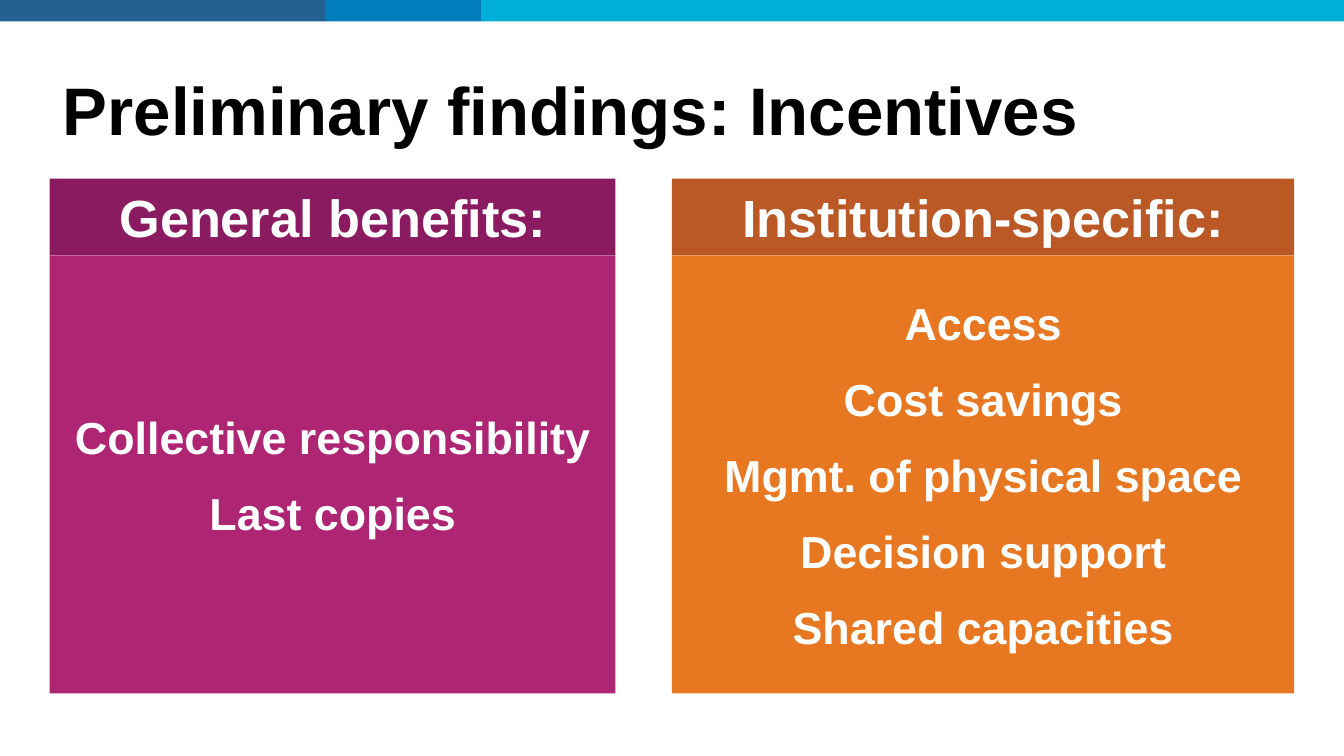
from dataclasses import dataclass

import pptx
import pptx.dml.color
import pptx.enum.shapes
import pptx.enum.text
import pptx.util

Pt = pptx.util.Pt
RGBColor = pptx.dml.color.RGBColor
Align = pptx.enum.text.PP_ALIGN
Anchor = pptx.enum.text.MSO_ANCHOR

BLACK = RGBColor(0x00, 0x00, 0x00)
WHITE = RGBColor(0xFF, 0xFF, 0xFF)
NAVY = RGBColor(0x23, 0x61, 0x92)
BLUE = RGBColor(0x00, 0x7D, 0xBA)
CYAN = RGBColor(0x00, 0xAF, 0xD7)
MAGENTA = RGBColor(0xAE, 0x25, 0x73)
PLUM = RGBColor(0x8A, 0x1B, 0x61)
ORANGE = RGBColor(0xE8, 0x77, 0x22)
RUST = RGBColor(0xBA, 0x58, 0x26)

FONT = "Arial"
SLIDE_WIDTH, SLIDE_HEIGHT = 720, 405
MARGIN = 26.64
STRIPE_HEIGHT = 11.52
HEADER_TOP, HEADER_HEIGHT = 95.76, 41.04
BODY_HEIGHT = 234.72


@dataclass(frozen=True)
class Stripe:
    width: float
    color: RGBColor


@dataclass(frozen=True)
class Panel:
    left: float
    width: float
    heading: str
    benefits: tuple[str, ...]
    header_color: RGBColor
    body_color: RGBColor


STRIPES = (Stripe(174.24, NAVY), Stripe(83.52, BLUE), Stripe(462.24, CYAN))

PANELS = (
    Panel(MARGIN, 303.12, "General benefits:",
          ("Collective responsibility", "Last copies"), PLUM, MAGENTA),
    Panel(360, 333.36, "Institution-specific:",
          ("Access", "Cost savings", "Mgmt. of physical space",
           "Decision support", "Shared capacities"), RUST, ORANGE),
)


def write_text(box, *lines: str, size: float, color: RGBColor = WHITE,
               align=Align.CENTER, anchor=Anchor.TOP, gap: float = 0) -> None:
    """Write one bold paragraph per line, with a gap between paragraphs."""
    frame = box.text_frame
    frame.word_wrap = True
    frame.vertical_anchor = anchor
    for index, line in enumerate(lines):
        para = frame.paragraphs[0] if index == 0 else frame.add_paragraph()
        para.alignment = align
        if index and gap:
            para.space_before = Pt(gap)
        span = para.add_run()
        span.text = line
        span.font.name = FONT
        span.font.size = Pt(size)
        span.font.bold = True
        span.font.color.rgb = color


def add_block(page, left: float, top: float, width: float, height: float,
              color: RGBColor):
    box = page.shapes.add_shape(pptx.enum.shapes.MSO_SHAPE.RECTANGLE,
                                Pt(left), Pt(top), Pt(width), Pt(height))
    box.shadow.inherit = False
    box.fill.solid()
    box.fill.fore_color.rgb = color
    box.line.fill.background()
    return box


def draw_stripes(page) -> None:
    left = 0
    for stripe in STRIPES:
        add_block(page, left, 0, stripe.width, STRIPE_HEIGHT, stripe.color)
        left += stripe.width


def draw_panel(page, panel: Panel) -> None:
    body = add_block(page, panel.left, HEADER_TOP + HEADER_HEIGHT,
                     panel.width, BODY_HEIGHT, panel.body_color)
    write_text(body, *panel.benefits, size=24, anchor=Anchor.MIDDLE, gap=12)
    header = add_block(page, panel.left, HEADER_TOP,
                       panel.width, HEADER_HEIGHT, panel.header_color)
    write_text(header, panel.heading, size=28)


def main() -> None:
    deck = pptx.Presentation()
    deck.slide_width, deck.slide_height = Pt(SLIDE_WIDTH), Pt(SLIDE_HEIGHT)
    page = deck.slides.add_slide(deck.slide_layouts[6])
    draw_stripes(page)
    title = page.shapes.add_textbox(Pt(MARGIN), Pt(33.12), Pt(664.56), Pt(54))
    write_text(title, "Preliminary findings: Incentives", size=36,
               color=BLACK, align=Align.LEFT)
    for panel in PANELS:
        draw_panel(page, panel)
    deck.save("out.pptx")


if __name__ == "__main__":
    main()
